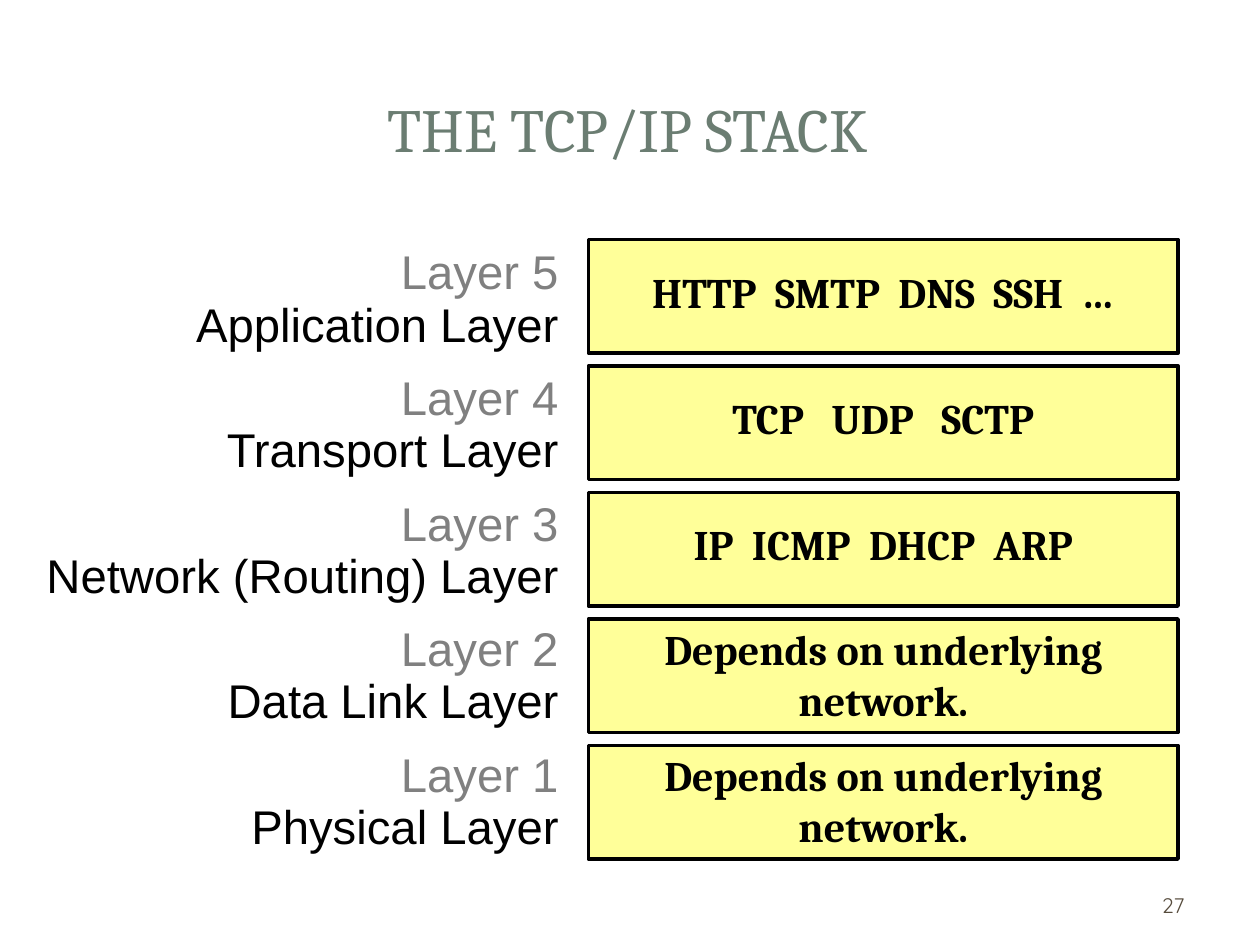
from dataclasses import dataclass

import pptx
import pptx.dml.color
import pptx.enum.shapes
import pptx.enum.text
import pptx.util

Cm = pptx.util.Cm
Pt = pptx.util.Pt
Align = pptx.enum.text.PP_ALIGN
Anchor = pptx.enum.text.MSO_ANCHOR


@dataclass(frozen=True)
class Theme:
    heading_font: str = "Cambria"
    label_font: str = "Arial"
    number_font: str = "Quicksand"
    title_color: str = "6B7D72"
    number_color: str = "564B3C"
    muted: str = "808080"
    ink: str = "000000"
    box_fill: str = "FFFF99"
    title_size: float = 35
    label_size: float = 27
    protocol_size: float = 24
    number_size: float = 12
    label_spacing: float = 30
    box_line: float = 2


@dataclass(frozen=True)
class Layer:
    number: int
    name: str
    protocols: str
    label_left: float = 2.11
    protocol_offset: float = 0.41


THEME = Theme()
STACK_TOP = 4.83
BOX_PITCH = 2.55
LABEL_PITCH = 2.53
TEXT_PITCH = 2.54
BOX_LEFT, BOX_WIDTH, BOX_HEIGHT = 11.86, 11.89, 2.29
LABEL_RIGHT, LABEL_HEIGHT = 11.56, 2.46

LAYERS = [
    Layer(5, "Application Layer", "HTTP  SMTP  DNS  SSH  …"),
    Layer(4, "Transport Layer", "TCP   UDP   SCTP"),
    Layer(3, "Network (Routing) Layer", "IP  ICMP  DHCP  ARP", label_left=0),
    Layer(2, "Data Link Layer", "Depends on underlying network.", protocol_offset=0),
    Layer(1, "Physical Layer", "Depends on underlying network.", protocol_offset=0),
]


def rgb(color: str) -> pptx.dml.color.RGBColor:
    return pptx.dml.color.RGBColor.from_string(color)


def write(paragraph, text: str, *, font: str, size: float, color: str,
          bold: bool = False, align=Align.CENTER) -> None:
    paragraph.alignment = align
    run = paragraph.add_run()
    run.text = text
    run.font.name = font
    run.font.size = Pt(size)
    run.font.bold = bold
    run.font.color.rgb = rgb(color)


def add_text_frame(slide, left: float, top: float, width: float, height: float):
    text_box = slide.shapes.add_textbox(Cm(left), Cm(top), Cm(width), Cm(height))
    text_box.text_frame.word_wrap = True
    return text_box.text_frame


def add_title(slide, text: str) -> None:
    title = slide.shapes.title
    title.left, title.top, title.width, title.height = Cm(1.19), Cm(1.14), Cm(22.94), Cm(2.9)
    title.text_frame.vertical_anchor = Anchor.MIDDLE
    write(title.text_frame.paragraphs[0], text, font=THEME.heading_font,
          size=THEME.title_size, color=THEME.title_color)


def add_slide_number(slide, number: int) -> None:
    frame = add_text_frame(slide, 18.21, 17.73, 5.92, 1.02)
    frame.vertical_anchor = Anchor.MIDDLE
    write(frame.paragraphs[0], str(number), font=THEME.number_font,
          size=THEME.number_size, color=THEME.number_color, align=Align.RIGHT)


def add_label(slide, layer: Layer, row: int) -> None:
    frame = add_text_frame(slide, layer.label_left, STACK_TOP + row * LABEL_PITCH,
                           LABEL_RIGHT - layer.label_left, LABEL_HEIGHT)
    frame.margin_left = frame.margin_right = Cm(0.3)
    frame.margin_top = frame.margin_bottom = Cm(0.15)
    paragraph = frame.paragraphs[0]
    paragraph.line_spacing = Pt(THEME.label_spacing)
    write(paragraph, f"Layer {layer.number}", font=THEME.label_font,
          size=THEME.label_size, color=THEME.muted, align=Align.RIGHT)
    paragraph.add_line_break()
    write(paragraph, layer.name, font=THEME.label_font,
          size=THEME.label_size, color=THEME.ink, align=Align.RIGHT)


def add_box(slide, row: int) -> None:
    box = slide.shapes.add_shape(
        pptx.enum.shapes.MSO_SHAPE.RECTANGLE, Cm(BOX_LEFT),
        Cm(STACK_TOP + row * BOX_PITCH), Cm(BOX_WIDTH), Cm(BOX_HEIGHT))
    box.shadow.inherit = False
    box.fill.solid()
    box.fill.fore_color.rgb = rgb(THEME.box_fill)
    box.line.color.rgb = rgb(THEME.ink)
    box.line.width = Pt(THEME.box_line)


def add_protocols(slide, layer: Layer, row: int) -> None:
    top = STACK_TOP + row * TEXT_PITCH + layer.protocol_offset
    frame = add_text_frame(slide, BOX_LEFT, top, BOX_WIDTH, 1.27)
    write(frame.paragraphs[0], layer.protocols, font=THEME.heading_font,
          size=THEME.protocol_size, color=THEME.ink, bold=True)


def main() -> None:
    presentation = pptx.Presentation()
    presentation.slide_width, presentation.slide_height = Cm(25.4), Cm(19.05)
    slide = presentation.slides.add_slide(presentation.slide_layouts[5])
    add_title(slide, "THE TCP/IP STACK")
    add_slide_number(slide, 27)
    for row, layer in enumerate(LAYERS):
        add_label(slide, layer, row)
        add_box(slide, row)
        add_protocols(slide, layer, row)
    presentation.save("out.pptx")


if __name__ == "__main__":
    main()
